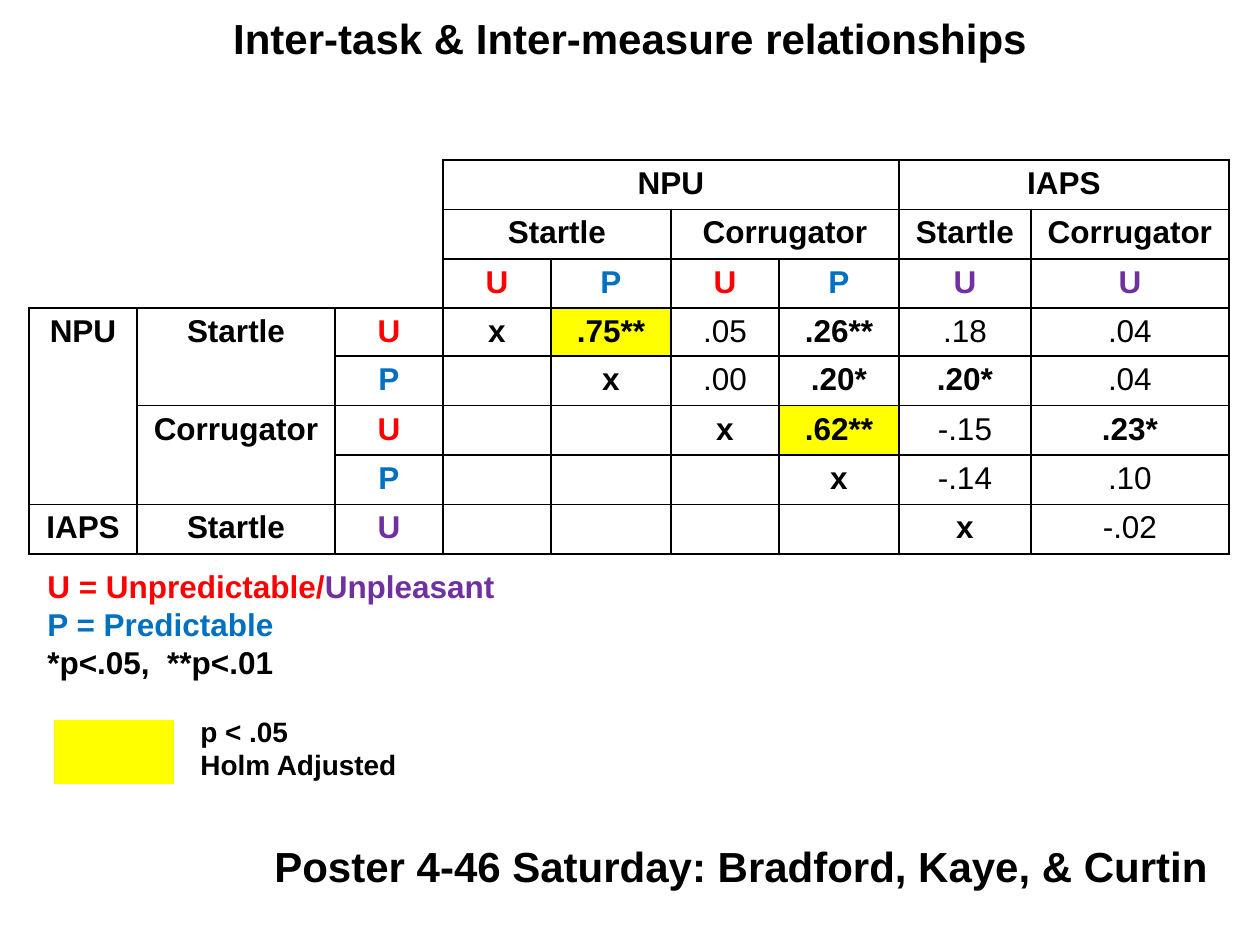
"""Build a slide with a correlation table, its legend, a title and a poster reference."""
from dataclasses import dataclass

import lxml.etree
import pptx
import pptx.dml.color
import pptx.enum.shapes
import pptx.enum.text
import pptx.oxml.ns
import pptx.util

EMU_PER_PX = 914400 / 126
ALIGN = pptx.enum.text.PP_ALIGN


@dataclass(frozen=True)
class Theme:
    font: str = "Arial"
    ink: str = "000000"
    unpredictable: str = "FF0000"
    predictable: str = "0070C0"
    unpleasant: str = "7030A0"
    highlight: str = "FFFF00"
    heading: int = 24
    body: int = 18
    small: int = 16
    border: int = 1


@dataclass(frozen=True)
class Box:
    x: int
    y: int
    w: int
    h: int


@dataclass(frozen=True)
class Note:
    box: Box
    size: int
    lines: tuple
    wrap: bool = True
    align: ALIGN = ALIGN.LEFT


@dataclass(frozen=True)
class Span:
    row: int
    col: int
    last_row: int
    last_col: int


T = Theme()
TABLE = Box(29, 160, 1200, 384)
COLUMNS = (108, 198, 108, 108, 120, 108, 120, 132, 198)
HEAD_ROWS = HEAD_COLS = 3
IAPS_ROW = IAPS_COL = 7
CELLS = [line.split("|") for line in (
    "|||NPU||||IAPS|",
    "|||Startle||Corrugator||Startle|Corrugator",
    "|||U|P|U|P|U|U",
    "NPU|Startle|U|x|.75**|.05|.26**|.18|.04",
    "||P||x|.00|.20*|.20*|.04",
    "|Corrugator|U|||x|.62**|-.15|.23*",
    "||P||||x|-.14|.10",
    "IAPS|Startle|U|||||x|-.02",
)]
SPANS = (
    Span(0, 3, 0, 6), Span(0, 7, 0, 8), Span(1, 3, 1, 4),
    Span(1, 5, 1, 6), Span(3, 0, 6, 0), Span(3, 1, 4, 1), Span(5, 1, 6, 1),
)
HOLM_ADJUSTED = {(3, 4), (5, 6)}

NOTES = (
    Note(Box(35, 561, 577, 127), T.body, (
        (("U = Unpredictable/", T.unpredictable), ("Unpleasant", T.unpleasant)),
        (("P = Predictable", T.predictable),),
        (("*p<.05,  **p<.01", T.ink),),
    )),
    Note(Box(262, 834, 968, 63), T.heading,
         ((("Poster 4-46 Saturday: Bradford, Kaye, & Curtin", T.ink),),), wrap=False),
    Note(Box(217, 6, 826, 63), T.heading,
         ((("Inter-task & Inter-measure relationships", T.ink),),),
         wrap=False, align=ALIGN.CENTER),
)
HOLM_NOTE = Note(Box(188, 708, 223, 81), T.small,
                 ((("p < .05", T.ink),), (("Holm Adjusted", T.ink),)))
HOLM_SWATCH = Box(54, 720, 120, 64)


def px(n: int) -> pptx.util.Emu:
    return pptx.util.Emu(round(n * EMU_PER_PX))


def place(box: Box) -> tuple:
    return px(box.x), px(box.y), px(box.w), px(box.h)


def rgb(color: str) -> pptx.dml.color.RGBColor:
    return pptx.dml.color.RGBColor.from_string(color)


def style(r, size: int, color: str, bold: bool = True) -> None:
    r.font.name = T.font
    r.font.size = pptx.util.Pt(size)
    r.font.bold = bold
    r.font.color.rgb = rgb(color)


def add_note(shapes, note: Note) -> None:
    sp = shapes.add_textbox(*place(note.box))
    tf = sp.text_frame
    tf.word_wrap = note.wrap
    tf.auto_size = pptx.enum.text.MSO_AUTO_SIZE.SHAPE_TO_FIT_TEXT
    for i, line in enumerate(note.lines):
        p = tf.add_paragraph() if i else tf.paragraphs[0]
        p.alignment = note.align
        for text, color in line:
            r = p.add_run()
            r.text = text
            style(r, note.size, color)


def add_swatch(shapes, box: Box) -> None:
    sp = shapes.add_shape(pptx.enum.shapes.MSO_SHAPE.RECTANGLE, *place(box))
    sp.shadow.inherit = False
    sp.fill.solid()
    sp.fill.fore_color.rgb = rgb(T.highlight)
    sp.line.fill.background()


def set_borders(cell, visible: dict) -> None:
    qn = pptx.oxml.ns.qn
    tcPr = cell._tc.get_or_add_tcPr()
    for i, (side, shown) in enumerate(visible.items()):
        ln = lxml.etree.Element(qn("a:ln" + side), w=str(pptx.util.Pt(T.border)))
        fill = lxml.etree.SubElement(ln, qn("a:solidFill" if shown else "a:noFill"))
        if shown:
            lxml.etree.SubElement(fill, qn("a:srgbClr"), val=T.ink)
        tcPr.insert(i, ln)


def cell_color(text: str, row: int, col: int) -> str:
    if text == "P":
        return T.predictable
    if text == "U":
        iaps = row >= IAPS_ROW or col >= IAPS_COL
        return T.unpleasant if iaps else T.unpredictable
    return T.ink


def fill_cell(cell, text: str, row: int, col: int) -> None:
    corner = row < HEAD_ROWS and col < HEAD_COLS
    set_borders(cell, {
        "L": not corner,
        "R": not corner or col == HEAD_COLS - 1,
        "T": not corner,
        "B": not corner or row == HEAD_ROWS - 1,
    })
    if (row, col) in HOLM_ADJUSTED:
        cell.fill.solid()
        cell.fill.fore_color.rgb = rgb(T.highlight)
    else:
        cell.fill.background()
    cell.margin_top, cell.margin_bottom = px(6), px(5)
    p = cell.text_frame.paragraphs[0]
    p.alignment = ALIGN.CENTER
    p.font.size = pptx.util.Pt(T.body)
    if text:
        label = row < HEAD_ROWS or col < HEAD_COLS
        p.text = text
        style(p.runs[0], T.body, cell_color(text, row, col),
              label or text == "x" or "*" in text)


def add_correlations(shapes) -> None:
    table = shapes.add_table(len(CELLS), len(COLUMNS), *place(TABLE)).table
    table.first_row = table.horz_banding = False
    for column, width in zip(table.columns, COLUMNS):
        column.width = px(width)
    for row, texts in enumerate(CELLS):
        table.rows[row].height = px(TABLE.h // len(CELLS))
        for col, text in enumerate(texts):
            fill_cell(table.cell(row, col), text, row, col)
    for span in SPANS:
        table.cell(span.row, span.col).merge(table.cell(span.last_row, span.last_col))


def main() -> None:
    prs = pptx.Presentation()
    prs.slide_width, prs.slide_height = px(1260), px(945)
    s = prs.slides.add_slide(prs.slide_layouts[6])
    add_correlations(s.shapes)
    for note in NOTES:
        add_note(s.shapes, note)
    legend = s.shapes.add_group_shape()
    add_note(legend.shapes, HOLM_NOTE)
    add_swatch(legend.shapes, HOLM_SWATCH)
    prs.save("out.pptx")


if __name__ == "__main__":
    main()
